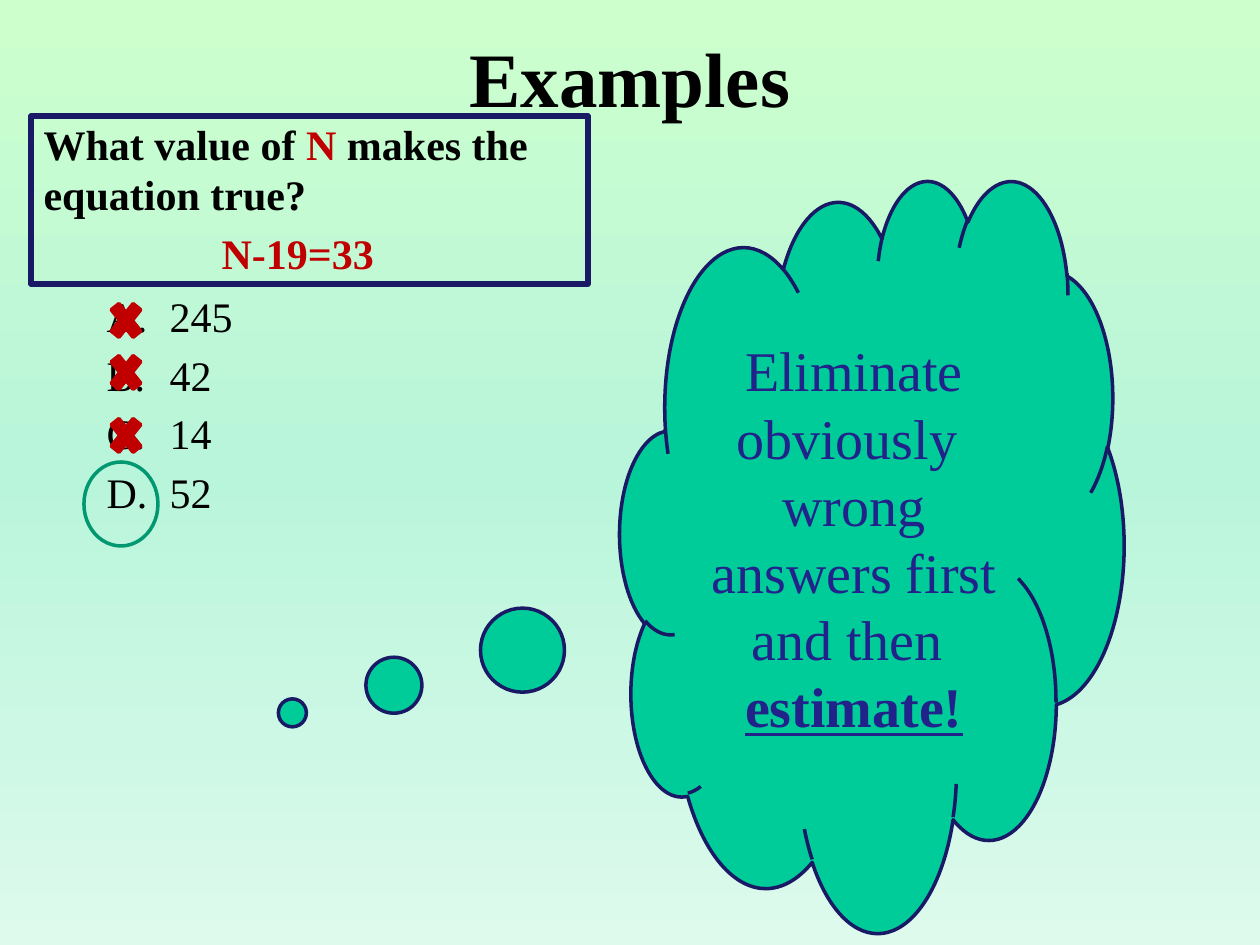
from lxml import etree
from pptx import Presentation
from pptx.dml.color import RGBColor
from pptx.enum.shapes import MSO_SHAPE
from pptx.enum.text import MSO_ANCHOR, MSO_AUTO_SIZE, PP_ALIGN
from pptx.oxml.ns import qn
from pptx.util import Emu, Pt

CLOUD, CROSS, OVAL = MSO_SHAPE.CLOUD_CALLOUT, MSO_SHAPE.MATH_MULTIPLY, MSO_SHAPE.OVAL
TOP, MIDDLE, BOTTOM = MSO_ANCHOR.TOP, MSO_ANCHOR.MIDDLE, MSO_ANCHOR.BOTTOM
LEFT, CENTER = PP_ALIGN.LEFT, PP_ALIGN.CENTER
NO_AUTOFIT = MSO_AUTO_SIZE.NONE
COMPARISON_LAYOUT = 4
FONT = "Times New Roman"
EMU_PER_PX = 914400 / 126

COLORS = {
    "text": "000000", "red": "C00000", "navy": "191966", "advice": "22228B",
    "cloud": "00CC99", "ring": "009771",
}
BACKGROUND_STOPS = [(0, "CCFFCC"), (50, "B9F5DB"), (100, "DDFAED")]


def px(length):
    return Emu(round(length * EMU_PER_PX))


def rgb(name):
    return RGBColor.from_string(COLORS[name])


def apply(target, formats):
    for attribute, value in formats.items():
        setattr(target, attribute, value)


def place(shape, box):
    apply(shape, dict(zip(("left", "top", "width", "height"), map(px, box))))


def outline(shape, color, width):
    shape.line.color.rgb = rgb(color)
    shape.line.width = Pt(width)


def paint_background(slide):
    fill = slide.background.fill
    fill.gradient()
    fill.gradient_angle = 270
    stops = next(slide.element.iter(qn("a:gsLst")))
    for stop in list(stops):
        stops.remove(stop)
    for percent, color in BACKGROUND_STOPS:
        stop = etree.SubElement(stops, qn("a:gs"), pos=str(percent * 1000))
        etree.SubElement(stop, qn("a:srgbClr"), val=color)


def write(shape, paragraphs, size, anchor, align=LEFT):
    """Each paragraph is a list of (words, color, font formats)."""
    frame = shape.text_frame
    apply(frame, {"word_wrap": True, "auto_size": NO_AUTOFIT, "vertical_anchor": anchor})
    for index, runs in enumerate(paragraphs):
        paragraph = frame.add_paragraph() if index else frame.paragraphs[0]
        paragraph.alignment = align
        for words, color, formats in runs:
            run = paragraph.add_run()
            run.text = words
            apply(run.font, {"name": FONT, "size": Pt(size), "bold": False, **formats})
            run.font.color.rgb = rgb(color)
    return frame.paragraphs


def indent(paragraph, margin, first_line=0, numbering=None):
    properties = paragraph._p.get_or_add_pPr()
    properties.set("marL", str(px(margin)))
    properties.set("indent", str(px(first_line)))
    if numbering:
        etree.SubElement(properties, qn("a:buFont"), typeface="+mj-lt")
        etree.SubElement(properties, qn("a:buAutoNum"), type=numbering)
    else:
        etree.SubElement(properties, qn("a:buNone"))


def add_figure(slide, kind, box, line_color, fill_color=None):
    figure = slide.shapes.add_shape(kind, *map(px, box))
    figure.shadow.inherit = False
    if fill_color:
        figure.fill.solid()
        figure.fill.fore_color.rgb = rgb(fill_color)
    else:
        figure.fill.background()
    outline(figure, line_color, 2)
    return figure


def main():
    presentation = Presentation()
    presentation.slide_width, presentation.slide_height = px(1260), px(945)
    slide = presentation.slides.add_slide(presentation.slide_layouts[COMPARISON_LAYOUT])
    paint_background(slide)
    title, question, answers, *unused = slide.placeholders
    for placeholder in unused:
        placeholder.element.getparent().remove(placeholder.element)
    bold = {"bold": True}

    # Title
    place(title, (63, 38, 1134, 78))
    write(title, [[("Examples", "text", bold)]], 44, MIDDLE, CENTER)

    # Framed question with its equation
    place(question, (31, 116, 557, 168))
    outline(question, "navy", 3)
    prompt, equation = write(question, [
        [("What value of ", "text", bold), ("N", "red", bold),
         (" makes the equation true?", "text", bold)],
        [("N-19=33", "red", bold)],
    ], 24, BOTTOM)
    indent(prompt, 0)
    indent(equation, 178)

    # Lettered answers
    place(answers, (94, 284, 494, 582))
    choices = [[(value, "text", {})] for value in ("245", "42", "14", "52")]
    for choice in write(answers, choices, 24, TOP):
        indent(choice, 63, -63, "alphaUcPeriod")

    # Advice in a thought cloud
    cloud = add_figure(slide, CLOUD, (620, 179, 504, 752), "navy", "cloud")
    cloud.adjustments[0], cloud.adjustments[1] = -1.15, 0.21
    write(cloud, [
        [("Eliminate obviously  wrong answers first and then ", "advice", {})],
        [("estimate!", "advice", {"bold": True, "underline": True})],
    ], 32, MIDDLE, CENTER)

    # Wrong answers crossed out, right answer ringed
    for top in (294, 346, 409):
        add_figure(slide, CROSS, (105, top, 42, 53), "red", "red")
    add_figure(slide, OVAL, (84, 462, 74, 84), "ring")

    presentation.save("out.pptx")


if __name__ == "__main__":
    main()
